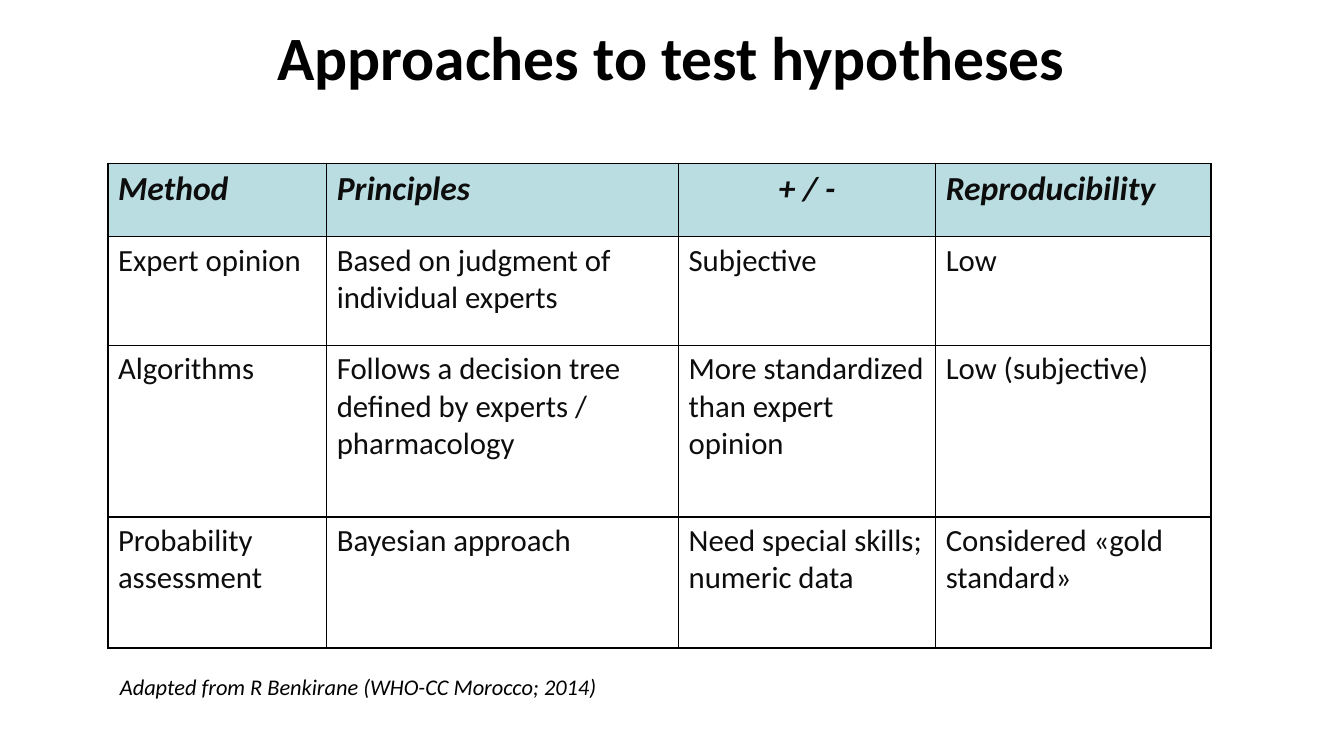
from dataclasses import dataclass

from lxml.etree import SubElement
from pptx import Presentation
from pptx.dml.color import RGBColor
from pptx.enum.text import MSO_ANCHOR as Anchor, MSO_AUTO_SIZE as AutoSize, PP_ALIGN as Align
from pptx.oxml.ns import qn
from pptx.slide import Slide
from pptx.table import _Cell as Cell
from pptx.text.text import TextFrame
from pptx.util import Inches, Pt

WIDTH, HEIGHT = Inches(13.33), Inches(7.5)
BLACK = RGBColor(0x00, 0x00, 0x00)
INK = RGBColor(0x0D, 0x0D, 0x0D)
HEADER_FILL = RGBColor(0xBA, 0xDD, 0xE1)
WHITE = RGBColor(0xFF, 0xFF, 0xFF)
COLUMN_SHARES = (16.28, 26.18, 19.13, 20.48)
ROW_SHARES = (9.73, 14.4, 22.67, 17.33)
METHODS = (
    ("Method", "Principles", "+ / -", "Reproducibility"),
    ("Expert opinion", "Based on judgment of individual experts", "Subjective", "Low"),
    ("Algorithms", "Follows a decision tree defined by experts / pharmacology",
     "More standardized than expert opinion", "Low (subjective)"),
    ("Probability assessment", "Bayesian approach",
     "Need special skills; numeric data", "Considered «gold standard»"),
)


@dataclass(frozen=True)
class Area:
    """A rectangle in percent of the slide's width and height."""
    left: float
    top: float
    width: float
    height: float

    def lengths(self) -> tuple[int, int, int, int]:
        """Return left, top, width and height as slide lengths."""
        return across(self.left), down(self.top), across(self.width), down(self.height)


@dataclass(frozen=True)
class Style:
    """The look of a piece of text."""
    size: int
    color: RGBColor
    bold: bool = False
    italic: bool = False
    align: Align = Align.LEFT


TITLE_AREA = Area(16.88, 0.67, 66.17, 13.33)
TABLE_AREA = Area(8.03, 21.6, sum(COLUMN_SHARES), sum(ROW_SHARES))
SOURCE_AREA = Area(8.18, 88.4, 37.43, 4.93)
TITLE = Style(44, BLACK, bold=True, align=Align.CENTER)
HEADER = Style(24, INK, bold=True, italic=True)
HEADER_CENTERED = Style(24, INK, bold=True, italic=True, align=Align.CENTER)
BODY = Style(22, INK)
SOURCE = Style(16, BLACK, italic=True)


def across(share: float) -> int:
    """Turn a percentage of the slide's width into a length."""
    return round(WIDTH * share / 100)


def down(share: float) -> int:
    """Turn a percentage of the slide's height into a length."""
    return round(HEIGHT * share / 100)


def write(frame: TextFrame, text: str, style: Style) -> None:
    """Put styled text into a text frame."""
    frame.text = text
    for para in frame.paragraphs:
        para.alignment = style.align
        for span in para.runs:
            span.font.name = "Calibri"
            span.font.size = Pt(style.size)
            span.font.bold = style.bold
            span.font.italic = style.italic
            span.font.color.rgb = style.color


def add_borders(cell: Cell) -> None:
    """Draw a thin black line on every side of a cell."""
    properties = cell._tc.get_or_add_tcPr()
    for side in ("a:lnL", "a:lnR", "a:lnT", "a:lnB"):
        line = SubElement(properties, qn(side), w=str(Pt(1)))
        fill = SubElement(line, qn("a:solidFill"))
        SubElement(fill, qn("a:srgbClr"), val=str(BLACK))


def add_title(page: Slide) -> None:
    """Place and fill the title."""
    title = page.shapes.title
    title.left, title.top, title.width, title.height = TITLE_AREA.lengths()
    title.text_frame.vertical_anchor = Anchor.MIDDLE
    write(title.text_frame, "Approaches to test hypotheses", TITLE)


def add_methods(page: Slide) -> None:
    """Add the table that compares the methods."""
    table = page.shapes.add_table(
        len(ROW_SHARES), len(COLUMN_SHARES), *TABLE_AREA.lengths()).table
    table.horz_banding = False
    for column, share in zip(table.columns, COLUMN_SHARES):
        column.width = across(share)
    for row, share in zip(table.rows, ROW_SHARES):
        row.height = down(share)
    for row_index, texts in enumerate(METHODS):
        is_header = row_index == 0
        for column_index, text in enumerate(texts):
            cell = table.cell(row_index, column_index)
            style = BODY
            if is_header:
                style = HEADER_CENTERED if text == "+ / -" else HEADER
            write(cell.text_frame, text, style)
            add_borders(cell)
            cell.fill.solid()
            cell.fill.fore_color.rgb = HEADER_FILL if is_header else WHITE


def add_source(page: Slide) -> None:
    """Add the source line under the table."""
    box = page.shapes.add_textbox(*SOURCE_AREA.lengths())
    box.text_frame.word_wrap = False
    box.text_frame.auto_size = AutoSize.SHAPE_TO_FIT_TEXT
    write(box.text_frame, "Adapted from R Benkirane (WHO-CC Morocco; 2014)", SOURCE)


def main() -> None:
    """Build and save the slide."""
    deck = Presentation()
    deck.slide_width, deck.slide_height = WIDTH, HEIGHT
    page = deck.slides.add_slide(deck.slide_layouts.get_by_name("Title Only"))
    add_title(page)
    add_methods(page)
    add_source(page)
    deck.save("out.pptx")


if __name__ == "__main__":
    main()
